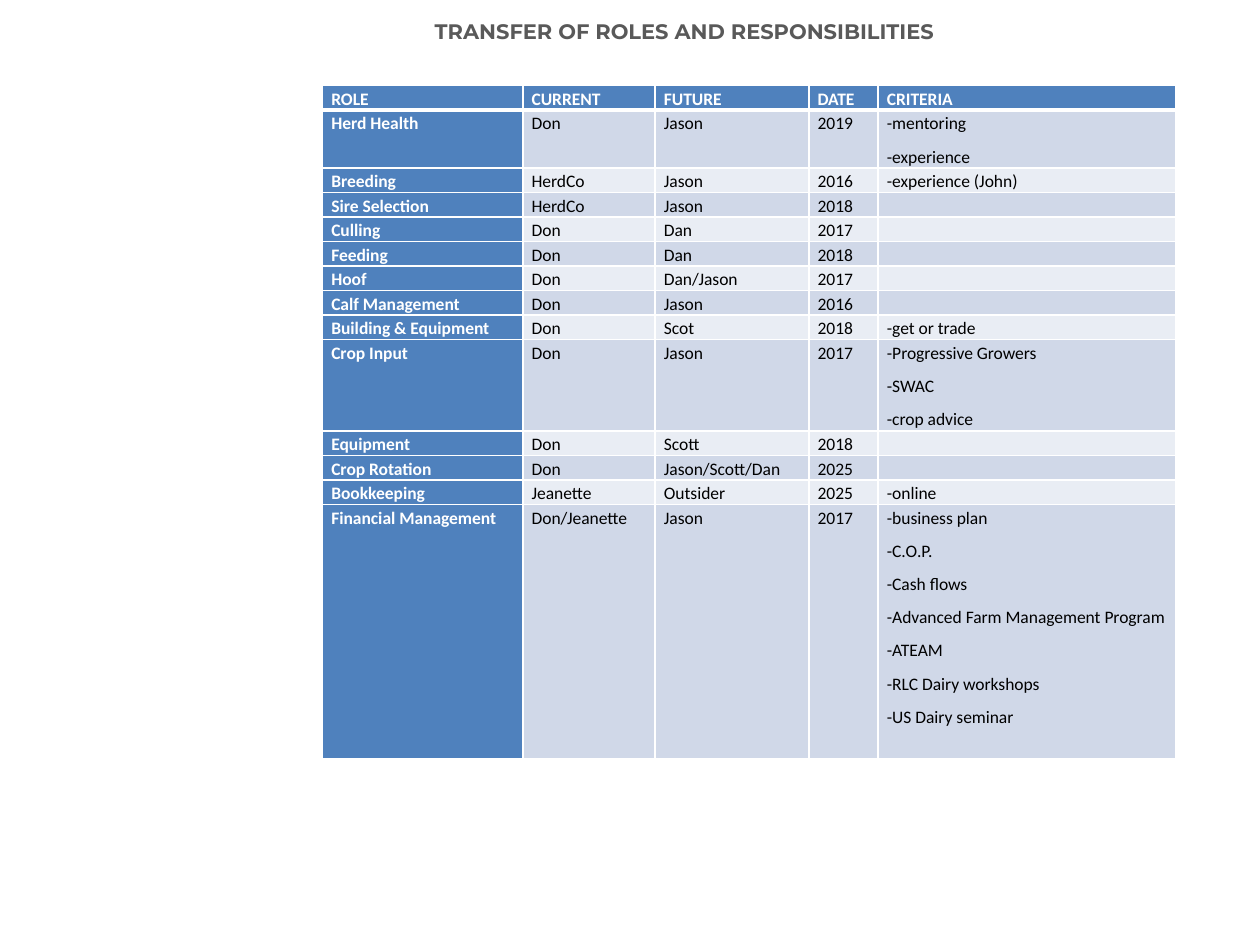
from dataclasses import dataclass

from lxml import etree
from pptx import Presentation
from pptx.dml.color import RGBColor
from pptx.enum.text import MSO_ANCHOR, PP_ALIGN
from pptx.oxml.ns import qn
from pptx.util import Inches, Pt

MIDDLE, TOP = MSO_ANCHOR.MIDDLE, MSO_ANCHOR.TOP
LEFT = PP_ALIGN.LEFT
TITLE_ONLY = 5


@dataclass(frozen=True)
class Theme:
    header: str = "4F81BD"
    odd_band: str = "D0D8E8"
    even_band: str = "E9EDF4"
    white: str = "FFFFFF"
    black: str = "000000"
    title: str = "595959"
    title_font: str = "Montserrat"
    body_font: str = "Calibri"
    title_size: int = 12
    body_size: int = 10
    rule: int = 1
    header_rule: int = 3


@dataclass(frozen=True)
class Transfer:
    role: str
    current: str
    future: str
    date: str
    criteria: tuple[str, ...] = ()
    height: float = 0.19

    def columns(self) -> list[tuple[str, ...]]:
        return [(self.role,), (self.current,), (self.future,), (self.date,), self.criteria]


THEME = Theme()
COLUMN_WIDTHS = (1.59, 1.05, 1.22, 0.55, 2.36)
TRANSFERS = (
    Transfer("ROLE", "CURRENT", "FUTURE", "DATE", ("CRITERIA",)),
    Transfer("Herd Health", "Don", "Jason", "2019", ("-mentoring", "-experience"), 0.46),
    Transfer("Breeding", "HerdCo", "Jason", "2016", ("-experience (John)",)),
    Transfer("Sire Selection", "HerdCo", "Jason", "2018"),
    Transfer("Culling", "Don", "Dan", "2017"),
    Transfer("Feeding", "Don", "Dan", "2018"),
    Transfer("Hoof", "Don", "Dan/Jason", "2017"),
    Transfer("Calf Management", "Don", "Jason", "2016"),
    Transfer("Building & Equipment", "Don", "Scot", "2018", ("-get or trade",)),
    Transfer("Crop Input", "Don", "Jason", "2017",
             ("-Progressive Growers", "-SWAC", "-crop advice"), 0.73),
    Transfer("Equipment", "Don", "Scott", "2018"),
    Transfer("Crop Rotation", "Don", "Jason/Scott/Dan", "2025"),
    Transfer("Bookkeeping", "Jeanette", "Outsider", "2025", ("-online",)),
    Transfer("Financial Management", "Don/Jeanette", "Jason", "2017",
             ("-business plan", "-C.O.P.", "-Cash flows",
              "-Advanced Farm Management Program", "-ATEAM",
              "-RLC Dairy workshops", "-US Dairy seminar"), 2.02),
)


def add_span(para, text: str, font: str, size: int, color: str, bold: bool) -> None:
    span = para.add_run()
    span.text = text
    span.font.name = font
    span.font.size = Pt(size)
    span.font.bold = bold
    span.font.color.rgb = RGBColor.from_string(color)


def add_border(cell, side: str, points: int) -> None:
    properties = cell._tc.get_or_add_tcPr()
    line = etree.SubElement(properties, qn(f"a:ln{side}"), w=str(Pt(points)))
    fill = etree.SubElement(line, qn("a:solidFill"))
    etree.SubElement(fill, qn("a:srgbClr"), val=THEME.white)


def fill_cell(cell, lines: tuple[str, ...], fill: str, strong: bool) -> None:
    cell.margin_left = cell.margin_right = Inches(0.07)
    cell.margin_top = cell.margin_bottom = 0
    cell.vertical_anchor = TOP
    cell.fill.solid()
    cell.fill.fore_color.rgb = RGBColor.from_string(fill)
    frame = cell.text_frame
    for index, line in enumerate(lines):
        para = frame.add_paragraph() if index else frame.paragraphs[0]
        para.line_spacing = 1.15
        para.space_before = Pt(5 if index else 0)
        add_span(para, line, THEME.body_font, THEME.body_size,
                 THEME.white if strong else THEME.black, strong)
    if not lines:
        # Keep an empty cell from stretching its row
        etree.SubElement(frame.paragraphs[0]._p, qn("a:endParaRPr"),
                         sz=str(THEME.body_size * 100))


def add_title(page, text: str) -> None:
    box = page.shapes.title
    box.left, box.top, box.width, box.height = map(Inches, (3.35, 0.1, 8.42, 0.3))
    frame = box.text_frame
    frame.word_wrap = True
    frame.vertical_anchor = MIDDLE
    para = frame.paragraphs[0]
    para.alignment = LEFT
    add_span(para, text, THEME.title_font, THEME.title_size, THEME.title, True)


def add_transfer_table(page, transfers: tuple[Transfer, ...]) -> None:
    height = sum(transfer.height for transfer in transfers)
    table = page.shapes.add_table(
        len(transfers), len(COLUMN_WIDTHS), Inches(2.56), Inches(0.68),
        Inches(sum(COLUMN_WIDTHS)), Inches(height)).table
    for column, width in zip(table.columns, COLUMN_WIDTHS):
        column.width = Inches(width)
    for row, transfer in enumerate(transfers):
        table.rows[row].height = Inches(transfer.height)
        band = THEME.odd_band if row % 2 else THEME.even_band
        for column, lines in enumerate(transfer.columns()):
            cell = table.cell(row, column)
            strong = row == 0 or column == 0
            # The heavy rule lies between the header and the first role
            add_border(cell, "L", THEME.rule)
            add_border(cell, "R", THEME.rule)
            add_border(cell, "T", THEME.header_rule if row == 1 else THEME.rule)
            add_border(cell, "B", THEME.header_rule if row == 0 else THEME.rule)
            fill_cell(cell, lines, THEME.header if strong else band, strong)


def main() -> None:
    deck = Presentation()
    deck.slide_width, deck.slide_height = Inches(10), Inches(7.5)
    page = deck.slides.add_slide(deck.slide_layouts[TITLE_ONLY])
    add_transfer_table(page, TRANSFERS)
    add_title(page, "TRANSFER OF ROLES AND RESPONSIBILITIES")
    deck.save("out.pptx")


if __name__ == "__main__":
    main()
